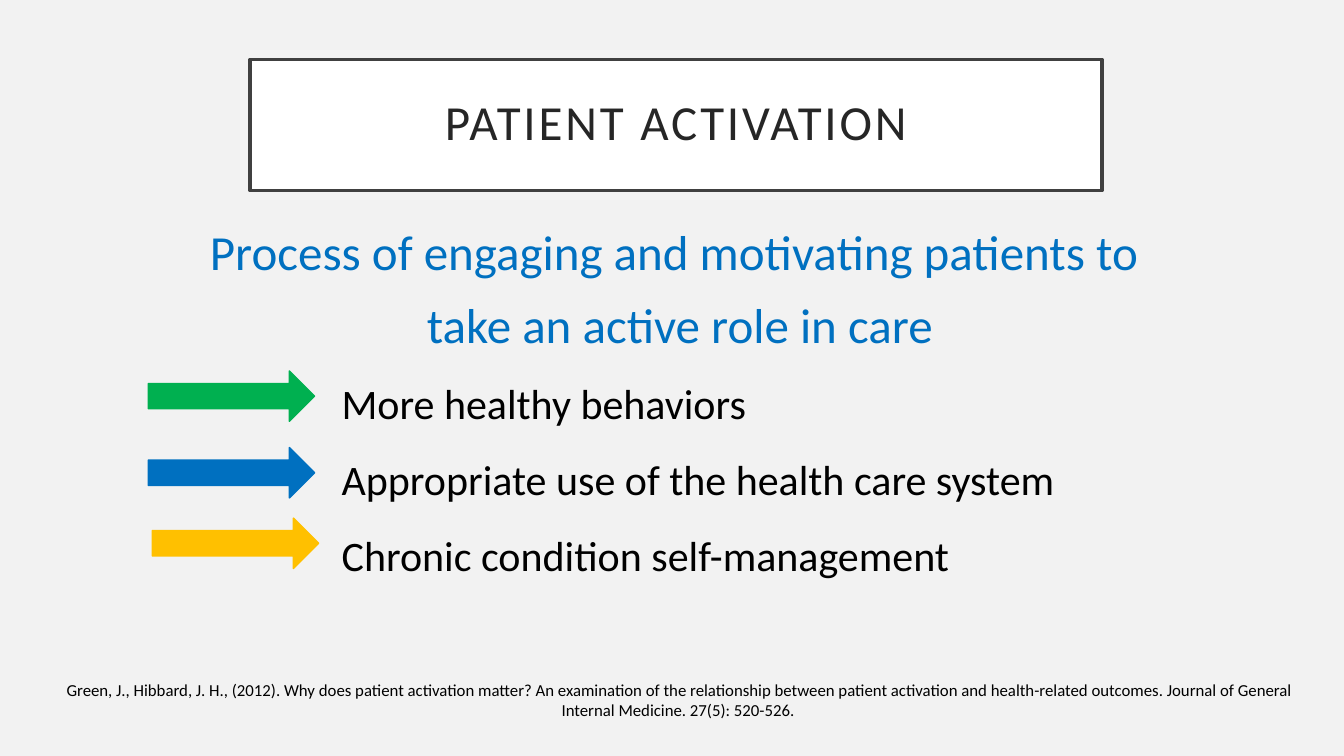
from pptx import Presentation
from pptx.dml.color import RGBColor
from pptx.enum.shapes import MSO_SHAPE
from pptx.enum.text import MSO_ANCHOR, PP_ALIGN
from pptx.util import Inches, Pt

FONT = "Calibri"
BLACK = "000000"
BLUE = "0070C0"


def color(hex_code):
    return RGBColor.from_string(hex_code)


def paint(shape, fill, line, width):
    shape.fill.solid()
    shape.fill.fore_color.rgb = color(fill)
    shape.line.color.rgb = color(line)
    shape.line.width = Pt(width)


def write(frame, text, size, hex_code=BLACK, align=PP_ALIGN.CENTER,
          spacing=1.0, before=0, tracking=0):
    frame.word_wrap = True
    for index, line in enumerate(text.split("\n")):
        paragraph = frame.paragraphs[0] if index == 0 else frame.add_paragraph()
        paragraph.alignment = align
        paragraph.line_spacing = spacing
        paragraph.space_before = Pt(before)
        run = paragraph.add_run()
        run.text = line
        run.font.name = FONT
        run.font.size = Pt(size)
        run.font.color.rgb = color(hex_code)
        if tracking:
            run.font._element.set("spc", str(tracking * 100))


def add_text(slide, box, text, **style):
    textbox = slide.shapes.add_textbox(*map(Inches, box))
    write(textbox.text_frame, text, **style)


def add_title(slide, box, text):
    title = slide.shapes.title
    title.left, title.top, title.width, title.height = map(Inches, box)
    paint(title, "FFFFFF", "404040", 2.5)
    frame = title.text_frame
    frame.vertical_anchor = MSO_ANCHOR.MIDDLE
    frame.margin_left = frame.margin_right = Inches(0.2)
    frame.margin_top = frame.margin_bottom = Inches(0.2)
    write(frame, text, size=35, hex_code="262626", spacing=0.9, tracking=2)


def add_outcomes(slide, box, outcomes, arrows):
    left, top, width, height = box
    text_left = 1.82
    add_text(slide, (left + text_left, top, width - text_left, height),
             "\n".join(outcomes), size=30, align=PP_ALIGN.LEFT, spacing=1.5)
    for indent, drop, hue in arrows:
        arrow = slide.shapes.add_shape(
            MSO_SHAPE.RIGHT_ARROW, Inches(left + indent), Inches(top + drop),
            Inches(1.65), Inches(0.5))
        arrow.shadow.inherit = False
        paint(arrow, hue, hue, 1)


def main():
    deck = Presentation()
    deck.slide_width = Inches(13.33)
    deck.slide_height = Inches(7.5)
    slide = deck.slides.add_slide(deck.slide_layouts[5])
    slide.background.fill.solid()
    slide.background.fill.fore_color.rgb = color("F2F2F2")

    add_title(slide, (2.48, 0.59, 8.45, 1.3), "PATIENT ACTIVATION")
    add_text(slide, (1.55, 2.15, 10.39, 1.3),
             "Process of engaging and motivating patients to \n"
             "take an active role in care",
             size=35, hex_code=BLUE, before=10)
    add_text(slide, (0.45, 6.69, 12.59, 0.5),
             "Green, J., Hibbard, J. H., (2012). Why does patient activation "
             "matter? An examination of the relationship between patient "
             "activation and health-related outcomes. Journal of General "
             "Internal Medicine. 27(5): 520-526. ", size=12)
    add_outcomes(slide, (1.47, 3.45, 9.56, 2.28),
                 ["More healthy behaviors",
                  "Appropriate use of the health care system",
                  "Chronic condition self-management"],
                 [(0, 0.23, "00B050"), (0, 0.99, BLUE), (0.04, 1.69, "FFC000")])
    deck.save("out.pptx")


if __name__ == "__main__":
    main()
